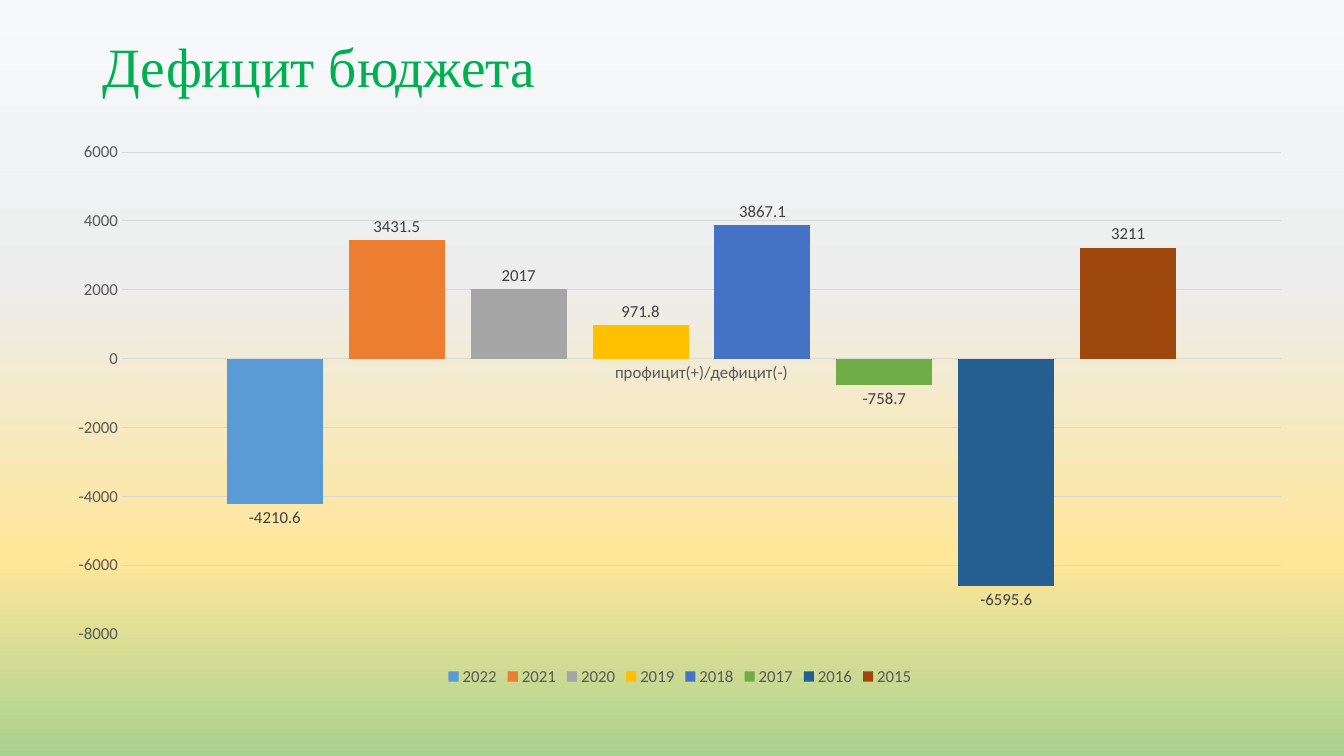
from dataclasses import dataclass

from lxml import etree
from pptx import Presentation
from pptx import util as u
from pptx.chart import data as chart_data
from pptx.dml import color
from pptx.enum import chart as ch
from pptx.enum import text
from pptx.oxml import ns


@dataclass(frozen=True)
class Theme:
    """Colours, fonts and type sizes of the slide."""

    title_font: str = "Times New Roman"
    chart_font: str = "Calibri"
    title_size: float = 39.6
    chart_size: float = 12
    title: str = "00B050"
    axis_text: str = "595959"
    label_text: str = "404040"
    grid: str = "D9D9D9"
    background: tuple = ((0, "F7FAFD"), (37, "EDEDED"), (74, "FFE699"), (100, "A9D18E"))


THEME = Theme()
CATEGORY = "профицит(+)/дефицит(-)"
BALANCES = (
    ("2022", -4210.6, "5B9BD5"),
    ("2021", 3431.5, "ED7D31"),
    ("2020", 2017, "A5A5A5"),
    ("2019", 971.8, "FFC000"),
    ("2018", 3867.1, "4472C4"),
    ("2017", -758.7, "70AD47"),
    ("2016", -6595.6, "255E91"),
    ("2015", 3211, "9E480E"),
)


def rgb(value):
    """Turn a hex string into a colour."""
    return color.RGBColor.from_string(value)


def style_font(font, name, size, colour):
    """Set the face, size and colour of a font."""
    font.name = name
    font.size = u.Pt(size)
    font.bold = False
    font.color.rgb = rgb(colour)


def style_chart_font(font, colour=THEME.axis_text):
    """Apply the type of the chart to a font."""
    style_font(font, THEME.chart_font, THEME.chart_size, colour)


def style_line(line):
    """Make a line thin and light grey."""
    line.color.rgb = rgb(THEME.grid)
    line.width = u.Pt(0.75)


def paint_background(slide):
    """Fill the background with a gradient running downwards."""
    fill = slide.background.fill
    fill.gradient()
    fill.gradient_angle = 270
    stops = next(slide.background._cSld.iter(ns.qn("a:gsLst")))
    for stop in list(stops):
        stops.remove(stop)
    for percent, colour in THEME.background:
        stop = etree.SubElement(stops, ns.qn("a:gs"), pos=str(percent * 1000))
        etree.SubElement(stop, ns.qn("a:srgbClr"), val=colour)


def add_title(slide, wording):
    """Add the slide heading."""
    shape = slide.shapes.add_textbox(u.Cm(2.33), u.Cm(1.02), u.Cm(29.21), u.Cm(1.45))
    frame = shape.text_frame
    frame.word_wrap = True
    frame.vertical_anchor = text.MSO_ANCHOR.MIDDLE
    paragraph = frame.paragraphs[0]
    paragraph.line_spacing = 0.9
    run = paragraph.add_run()
    run.text = wording
    style_font(run.font, THEME.title_font, THEME.title_size, THEME.title)


def style_axes(chart):
    """Format both axes, the gridlines and the value scale."""
    for axis in (chart.category_axis, chart.value_axis):
        axis.major_tick_mark = axis.minor_tick_mark = ch.XL_TICK_MARK.NONE
        style_chart_font(axis.tick_labels.font)
    style_line(chart.category_axis.format.line)
    values = chart.value_axis
    values.minimum_scale, values.maximum_scale, values.major_unit = -8000, 6000, 2000
    values.format.line.fill.background()
    style_line(values.major_gridlines.format.line)


def style_series(series, colour):
    """Colour a series and show its value."""
    series.invert_if_negative = False
    series.format.fill.solid()
    series.format.fill.fore_color.rgb = rgb(colour)
    labels = series.data_labels
    labels.show_value = True
    labels.position = ch.XL_LABEL_POSITION.OUTSIDE_END
    style_chart_font(labels.font, THEME.label_text)


def add_balance_chart(slide):
    """Add the column chart of yearly balances."""
    data = chart_data.CategoryChartData()
    data.categories = [CATEGORY]
    for year, balance, _ in BALANCES:
        data.add_series(year, [balance])
    chart = slide.shapes.add_chart(
        ch.XL_CHART_TYPE.COLUMN_CLUSTERED,
        u.Cm(1.35), u.Cm(3.3), u.Cm(31.57), u.Cm(14.1), data,
    ).chart
    chart.has_title = False
    style_chart_font(chart.font)
    chart.has_legend = True
    chart.legend.position = ch.XL_LEGEND_POSITION.BOTTOM
    chart.legend.include_in_layout = False
    style_chart_font(chart.legend.font)
    style_axes(chart)
    plot = chart.plots[0]
    plot.gap_width, plot.overlap, plot.vary_by_categories = 219, -27, False
    for series, (_, _, colour) in zip(plot.series, BALANCES):
        style_series(series, colour)


def main():
    """Build and save the presentation."""
    presentation = Presentation()
    presentation.slide_width, presentation.slide_height = u.Cm(33.87), u.Cm(19.05)
    slide = presentation.slides.add_slide(presentation.slide_layouts[6])
    paint_background(slide)
    add_title(slide, "Дефицит бюджета")
    add_balance_chart(slide)
    presentation.save("out.pptx")


if __name__ == "__main__":
    main()
